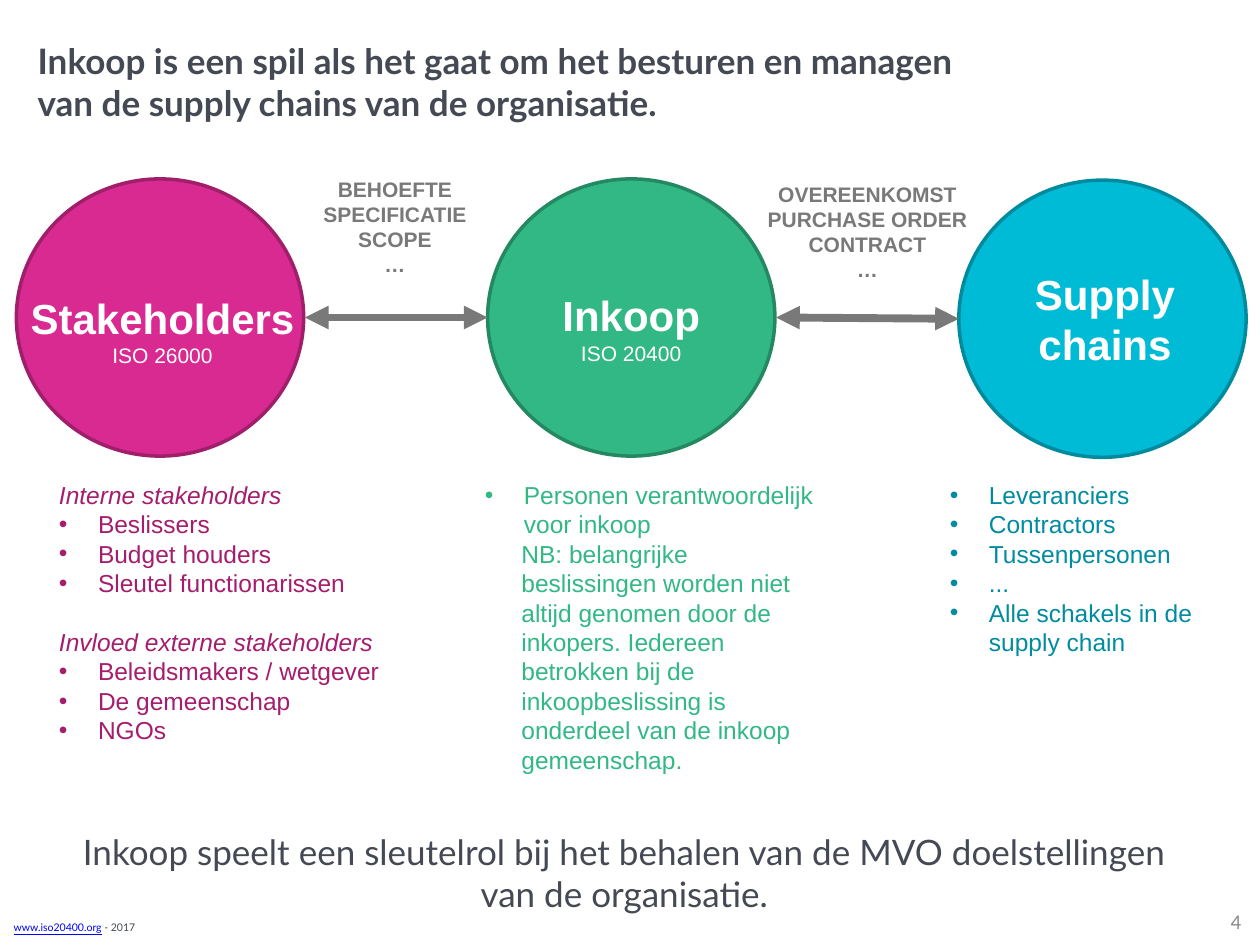
from dataclasses import dataclass

from lxml.etree import SubElement
from pptx import Presentation
from pptx.dml.color import RGBColor
from pptx.enum.shapes import MSO_CONNECTOR as Connector, MSO_SHAPE as Shape
from pptx.enum.text import MSO_ANCHOR as Anchor, PP_ALIGN as Align
from pptx.oxml.ns import qn
from pptx.util import Inches, Pt

COLORS = {
    "ink": "444953", "link": "0000FF", "number": "8C8C8C", "gray": "797979", "white": "FFFFFF",
    "pink": "D82A91", "pink_line": "A01F6B", "pink_text": "A41E6D",
    "green": "31B885", "green_line": "248862",
    "cyan": "00BBD6", "cyan_line": "008A9E", "cyan_text": "008CA0",
}
COLUMN_TOP = 3.76
BULLET_INDENT = 0.31


@dataclass
class Span:
    text: str
    size: float
    color: str
    font: str = "Arial"
    bold: bool = False
    italic: bool = False
    underline: bool = False


@dataclass
class Para:
    spans: list[Span]
    align: Align = Align.LEFT
    bullet: bool = False
    indent: float = 0
    space_before: float = 0


@dataclass
class Circle:
    left: float
    top: float
    fill: str
    line: str


def rgb(name: str) -> RGBColor:
    return RGBColor.from_string(COLORS[name])


def add_text(page, left: float, top: float, width: float, height: float,
             paras: list[Para], anchor: Anchor = Anchor.TOP, wrap: bool = True) -> None:
    box = page.shapes.add_textbox(Inches(left), Inches(top), Inches(width), Inches(height))
    frame = box.text_frame
    frame.word_wrap = wrap
    frame.vertical_anchor = anchor
    for index, item in enumerate(paras):
        para = frame.add_paragraph() if index else frame.paragraphs[0]
        para.alignment = item.align
        if item.space_before:
            para.space_before = Pt(item.space_before)
        props = para._p.get_or_add_pPr()
        if item.indent:
            props.set("marL", str(Inches(item.indent)))
        if item.bullet:
            props.set("indent", str(-Inches(item.indent)))
            SubElement(props, qn("a:buFont"), typeface="Arial")
            SubElement(props, qn("a:buChar"), char="•")
        for span in item.spans:
            for line_index, line in enumerate(span.text.split("\n")):
                if line_index:
                    para.add_line_break()
                run = para.add_run()
                run.text = line
                font = run.font
                font.name, font.size = span.font, Pt(span.size)
                font.bold, font.italic, font.underline = span.bold, span.italic, span.underline
                font.color.rgb = rgb(span.color)


def add_circle(page, circle: Circle) -> None:
    shape = page.shapes.add_shape(Shape.OVAL, Inches(circle.left), Inches(circle.top),
                                  Inches(2.28), Inches(2.2))
    shape.shadow.inherit = False
    shape.fill.solid()
    shape.fill.fore_color.rgb = rgb(circle.fill)
    shape.line.color.rgb = rgb(circle.line)
    shape.line.width = Pt(2)


def add_double_arrow(page, left: float, right: float, start_y: float, end_y: float) -> None:
    arrow = page.shapes.add_connector(Connector.STRAIGHT, Inches(left), Inches(start_y),
                                      Inches(right), Inches(end_y))
    arrow.line.color.rgb = rgb("gray")
    arrow.line.width = Pt(4.5)
    line = arrow.line._get_or_add_ln()
    for end in ("a:headEnd", "a:tailEnd"):
        SubElement(line, qn(end), type="triangle")
    SubElement(arrow._element.spPr, qn("a:effectLst"))


def centered(*spans: Span) -> Para:
    return Para(list(spans), Align.CENTER)


def bullets(color: str, *texts: str) -> list[Para]:
    return [Para([Span(text, 14, color)], bullet=True, indent=BULLET_INDENT) for text in texts]


def heading(text: str, space_before: float = 0) -> Para:
    return Para([Span(text, 14, "pink_text", italic=True)], space_before=space_before)


def name(text: str) -> Span:
    return Span(text, 24, "white", bold=True)


def standard(text: str) -> Span:
    return Span(text, 12, "white")


def flow(text: str) -> Para:
    return centered(Span(text, 12, "gray", bold=True))


def main() -> None:
    deck = Presentation()
    deck.slide_width, deck.slide_height = Inches(10), Inches(7.5)
    page = deck.slides.add_slide(deck.slide_layouts[6])

    # Title
    title = "Inkoop is een spil als het gaat om het besturen en managen van de supply chains van de organisatie."
    add_text(page, 0.2, 0.43, 7.68, 0.43,
             [Para([Span(title, 20, "ink", "Lato", bold=True)])], Anchor.MIDDLE)

    # Chain of circles and arrows
    for circle in (Circle(0.13, 1.42, "pink", "pink_line"),
                   Circle(3.87, 1.42, "green", "green_line"),
                   Circle(7.61, 1.43, "cyan", "cyan_line")):
        add_circle(page, circle)
    add_double_arrow(page, 2.42, 3.87, 2.52, 2.52)
    add_double_arrow(page, 6.16, 7.61, 2.52, 2.53)

    # Circle names
    add_text(page, 0.13, 2.27, 2.32, 0.71,
             [centered(name("Stakeholders")), centered(standard("ISO 26000"))], wrap=False)
    add_text(page, 4.36, 2.25, 1.3, 0.71,
             [centered(name("Inkoop\n"), standard("ISO 20400"))], wrap=False)
    add_text(page, 7, 2.08, 3.54, 0.91, [centered(name("Supply\nchains"))])

    # What flows between the circles
    add_text(page, 1.72, 1.35, 2.83, 0.91, [flow("BEHOEFTE"), flow("SPECIFICATIE\nSCOPE\n…")])
    add_text(page, 5.47, 1.39, 2.83, 0.91, [flow("OVEREENKOMST\nPURCHASE ORDER\nCONTRACT\n…")])

    # Columns below the circles
    add_text(page, 0.37, COLUMN_TOP, 2.83, 2.22, [
        heading("Interne stakeholders"),
        *bullets("pink_text", "Beslissers", "Budget houders", "Sleutel functionarissen"),
        heading("Invloed externe stakeholders", space_before=16.8),
        *bullets("pink_text", "Beleidsmakers / wetgever", "De gemeenschap", "NGOs"),
    ])
    note = ("NB: belangrijke beslissingen worden niet altijd genomen door de inkopers. Iedereen "
            "betrokken bij de inkoopbeslissing is onderdeel van de inkoop gemeenschap.")
    add_text(page, 3.75, COLUMN_TOP, 2.83, 2.46, [
        *bullets("green", "Personen verantwoordelijk voor inkoop"),
        Para([Span(note, 14, "green")], indent=0.29),
    ])
    add_text(page, 7.44, COLUMN_TOP, 2.46, 1.51, bullets(
        "cyan_text", "Leveranciers", "Contractors", "Tussenpersonen", "...",
        "Alle schakels in de supply chain"))

    # Conclusion
    conclusion = "Inkoop speelt een sleutelrol bij het behalen van de MVO doelstellingen van de organisatie."
    add_text(page, 0.35, 6.54, 9.21, 0.77, [centered(Span(conclusion, 20, "ink", "Lato"))])

    # Footer and page number
    add_text(page, 0.01, 7.26, 6.47, 0.2, [Para([
        Span("www.iso20400.org", 6, "link", "Lato", underline=True),
        Span(" - 2017", 6, "ink", "Lato")])])
    add_text(page, 7.62, 7.12, 2.33, 0.38,
             [Para([Span("4", 12, "number", "Calibri")], Align.RIGHT)], Anchor.MIDDLE)

    deck.save("out.pptx")


if __name__ == "__main__":
    main()
